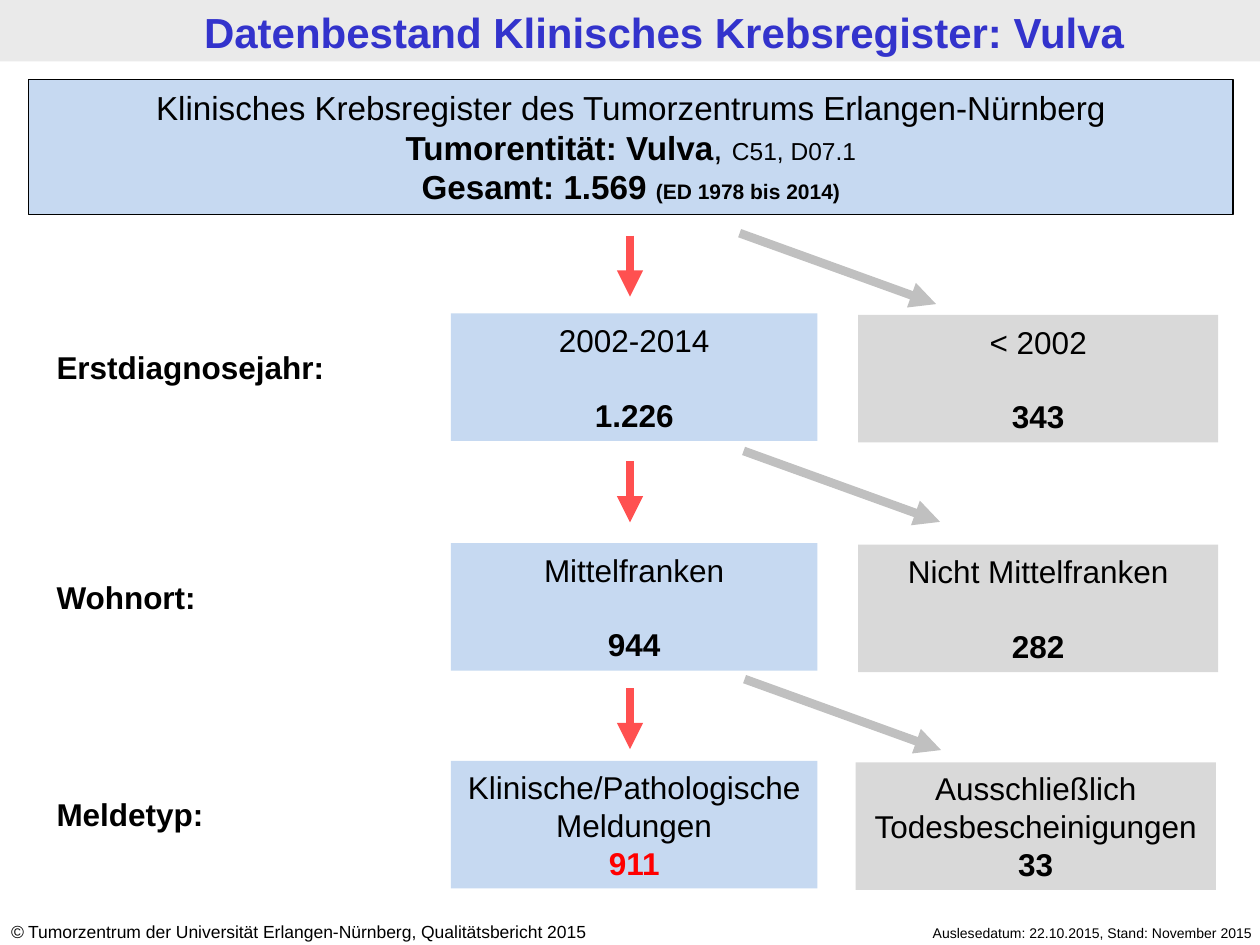
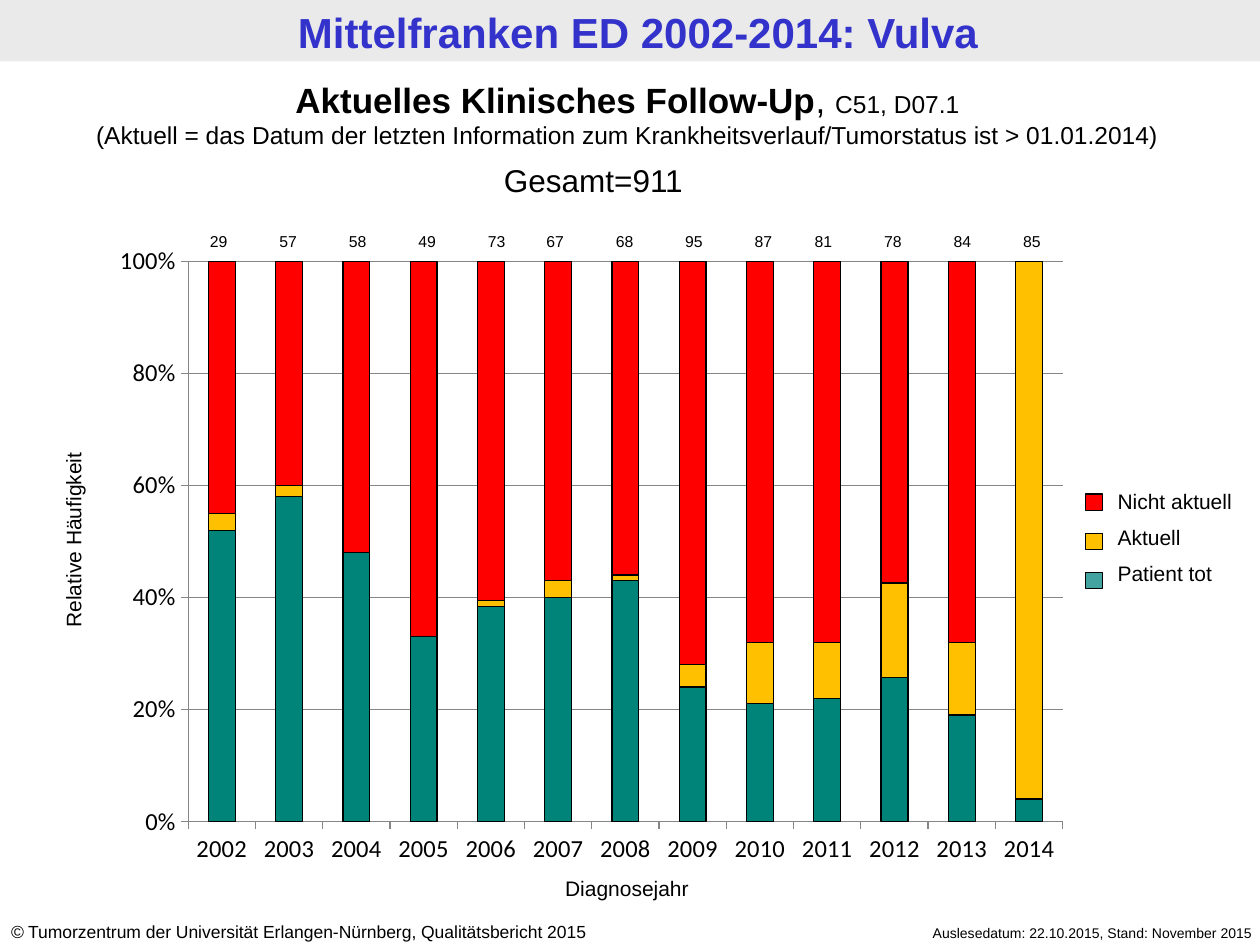
from dataclasses import dataclass
from itertools import chain

from lxml import etree
from pptx import Presentation, util as u
from pptx.chart import data as chart_data
from pptx.dml import color
from pptx.enum import chart as charts, shapes, text
from pptx.oxml import ns

Cm, Pt = u.Cm, u.Pt
LEFT, CENTER, RIGHT = text.PP_ALIGN.LEFT, text.PP_ALIGN.CENTER, text.PP_ALIGN.RIGHT


@dataclass(frozen=True)
class Theme:
    font: str = "Arial"
    chart_font: str = "Calibri"
    ink: str = "000000"
    title: str = "3333CC"
    band: str = "EAEAEA"
    kept: str = "C6D9F1"
    dropped: str = "D9D9D9"
    kept_arrow: str = "FF5050"
    dropped_arrow: str = "C0C0C0"
    alert: str = "FF0000"
    current: str = "FFC000"
    dead: str = "008378"
    axis: str = "868686"
    title_size: int = 24
    subtitle_size: int = 20
    header_size: int = 19
    body_size: int = 18
    detail_size: int = 14
    small_size: int = 12
    footer_size: int = 10
    count_size: int = 9
    date_size: int = 8


THEME = Theme()


@dataclass(frozen=True)
class Span:
    text: str
    size: int = THEME.body_size
    bold: bool = False
    color: str = THEME.ink
    italic: bool = False


@dataclass(frozen=True)
class Area:
    """Left, top, width and height in centimetres."""
    left: float
    top: float
    width: float
    height: float

    def lengths(self) -> list:
        return [Cm(n) for n in (self.left, self.top, self.width, self.height)]


@dataclass(frozen=True)
class Stage:
    label: str
    top: float
    kept: str
    kept_count: Span
    dropped: str
    dropped_count: str
    dropped_left: float
    count_gap: float
    kept_arrow_top: float
    dropped_arrow_start: tuple


STAGES = [
    Stage("Erstdiagnosejahr:", 6.32, "2002-2014", Span("1.226", bold=True),
          "< 2002", "343", 17.3, 21, 4.75, (14.91, 4.7)),
    Stage("Wohnort:", 10.95, "Mittelfranken", Span("944", bold=True),
          "Nicht Mittelfranken", "282", 17.3, 21, 9.3, (14.99, 9.09)),
    Stage("Meldetyp:", 15.34, "Klinische/Pathologische Meldungen",
          Span("911", bold=True, color=THEME.alert),
          "Ausschließlich Todesbescheinigungen", "33", 17.25, 0, 13.87, (15.01, 13.69)),
]


@dataclass(frozen=True)
class Status:
    name: str
    color: str
    shares: tuple
    key_color: str
    key_alpha: int = 100


STATUSES = [
    Status("Patient tot", THEME.dead,
           (52, 58, 48, 33, 38, 40, 43, 24, 21, 22, 26, 19, 4), "008380", 74),
    Status("Aktuell", THEME.current,
           (3, 2, 0, 0, 1, 3, 1, 4, 11, 10, 17, 13, 96), THEME.current),
    Status("Nicht aktuell", THEME.alert,
           (45, 40, 52, 67, 60, 57, 56, 72, 68, 68, 58, 68, 0), THEME.alert),
]
YEARS = range(2002, 2015)
COUNT_STEP = 1.4
# Each group of case counts starts at its own left edge
COUNT_GROUPS = {3.71: (29, 57, 58, 49, 73), 10.49: (67, 68, 95, 87), 15.9: (81, 78, 84, 85)}


def rgb(code: str) -> color.RGBColor:
    return color.RGBColor.from_string(code)


def write(frame, lines: list, align=LEFT, gap: float = 0) -> None:
    """Fill a frame with lines of spans; gap is the space between lines in points."""
    frame.word_wrap = True
    for number, spans in enumerate(lines):
        para = frame.add_paragraph() if number else frame.paragraphs[0]
        para.alignment = align
        if number and gap:
            para.space_before = Pt(gap)
        for span in spans:
            run = para.add_run()
            run.text = span.text
            run.font.name = THEME.font
            run.font.size = Pt(span.size)
            run.font.bold, run.font.italic = span.bold, span.italic
            run.font.color.rgb = rgb(span.color)


def add_text(page, area: Area, lines: list, align=LEFT, gap: float = 0):
    box = page.shapes.add_textbox(*area.lengths())
    write(box.text_frame, lines, align, gap)
    return box


def add_box(page, area: Area, fill: str, lines: list = (), outlined=False, gap: float = 0):
    box = page.shapes.add_shape(shapes.MSO_SHAPE.RECTANGLE, *area.lengths())
    box.shadow.inherit = False
    box.fill.solid()
    box.fill.fore_color.rgb = rgb(fill)
    if outlined:
        box.line.color.rgb = rgb(THEME.ink)
        box.line.width = Pt(0.75)
    else:
        box.line.fill.background()
    box.text_frame.vertical_anchor = text.MSO_ANCHOR.MIDDLE
    write(box.text_frame, lines, CENTER, gap)
    return box


def add_arrow(page, start: tuple, run: float, drop: float, line_color: str) -> None:
    left, top = start
    arrow = page.shapes.add_connector(shapes.MSO_CONNECTOR.STRAIGHT, Cm(left), Cm(top),
                                      Cm(left + run), Cm(top + drop))
    arrow.line.color.rgb = rgb(line_color)
    arrow.line.width = Pt(5)
    properties = arrow.element.spPr
    etree.SubElement(properties.find(ns.qn("a:ln")), ns.qn("a:tailEnd"), type="triangle")
    etree.SubElement(properties, ns.qn("a:effectLst"))


def add_page(deck, heading: str, title_left: float):
    """Add a slide with the title on its band and both footers."""
    page = deck.slides.add_slide(deck.slide_layouts[5])
    title = page.shapes.title
    title.left, title.top, title.width, title.height = Area(title_left, 0.03, 23.6, 1.24).lengths()
    frame = title.text_frame
    frame.margin_top = frame.margin_bottom = Cm(0.1)
    frame.vertical_anchor = text.MSO_ANCHOR.TOP
    frame.auto_size = text.MSO_AUTO_SIZE.NONE
    write(frame, [[Span(heading, THEME.title_size, True, THEME.title)]], CENTER)
    band = add_box(page, Area(0, 0, 25.4, 1.24), THEME.band)
    title.element.addprevious(band.element)
    add_text(page, Area(16.89, 18.52, 8.61, 0.61),
             [[Span("Auslesedatum: 22.10.2015, Stand: November 2015", THEME.date_size)]], RIGHT)
    add_text(page, Area(-0.03, 18.44, 13.31, 0.69), [[
        Span("©", THEME.footer_size, italic=True),
        Span(" Tumorzentrum der Universität Erlangen-Nürnberg, Qualitätsbericht 2015",
             THEME.footer_size)]])
    return page


def add_stage(page, stage: Stage) -> None:
    add_box(page, Area(9.09, stage.top, 7.39, 2.57), THEME.kept,
            [[Span(stage.kept)], [stage.kept_count]], gap=stage.count_gap)
    add_box(page, Area(stage.dropped_left, stage.top + 0.03, 7.26, 2.57), THEME.dropped,
            [[Span(stage.dropped)], [Span(stage.dropped_count, bold=True)]], gap=stage.count_gap)
    add_text(page, Area(0.89, stage.top + 0.57, 7.01, 1.02), [[Span(stage.label, bold=True)]])
    add_arrow(page, (12.7, stage.kept_arrow_top), 0, 1.23, THEME.kept_arrow)
    add_arrow(page, stage.dropped_arrow_start, 3.96, 1.43, THEME.dropped_arrow)


def build_data_page(deck) -> None:
    page = add_page(deck, "Datenbestand Klinisches Krebsregister: Vulva", 1.59)
    size = THEME.header_size
    add_box(page, Area(0.58, 1.6, 24.28, 2.72), THEME.kept, [
        [Span("Klinisches Krebsregister des Tumorzentrums Erlangen-Nürnberg", size)],
        [Span("Tumorentität: Vulva", size, True), Span(", ", size),
         Span("C51, D07.1", THEME.detail_size)],
        [Span("Gesamt: 1.569 ", size, True),
         Span("(ED 1978 bis 2014)", THEME.small_size, True)],
    ], outlined=True)
    for stage in STAGES:
        add_stage(page, stage)


def place_plot(chart, **fractions: float) -> None:
    """Fix the inner plot area as fractions of the chart's size."""
    plot_area = chart.element.find(".//" + ns.qn("c:plotArea"))
    for old in plot_area.findall(ns.qn("c:layout")):
        plot_area.remove(old)
    layout = etree.Element(ns.qn("c:layout"))
    plot_area.insert(0, layout)
    manual = etree.SubElement(layout, ns.qn("c:manualLayout"))
    settings = {"layoutTarget": "inner", "xMode": "edge", "yMode": "edge", **fractions}
    for name, value in settings.items():
        etree.SubElement(manual, ns.qn(f"c:{name}"), val=str(value))


def add_status_chart(page) -> None:
    data = chart_data.CategoryChartData(number_format="0")
    data.categories = [str(year) for year in YEARS]
    for status in STATUSES:
        data.add_series(status.name, status.shares)
    chart = page.shapes.add_chart(charts.XL_CHART_TYPE.COLUMN_STACKED_100,
                                  *Area(2.01, 4.75, 19.81, 12.98).lengths(), data).chart
    chart.has_legend = chart.has_title = False
    chart.font.name = THEME.chart_font
    chart.font.size = Pt(THEME.detail_size)
    chart.font.color.rgb = rgb(THEME.ink)
    plot = chart.plots[0]
    plot.gap_width, plot.overlap, plot.vary_by_categories = 150, 100, False
    for series, status in zip(plot.series, STATUSES):
        series.format.fill.solid()
        series.format.fill.fore_color.rgb = rgb(status.color)
        series.format.line.color.rgb = rgb(THEME.ink)
        series.format.line.width = Pt(0.75)
    shares = chart.value_axis
    shares.minimum_scale, shares.maximum_scale, shares.major_unit = 0, 1, 0.2
    shares.has_major_gridlines = True
    shares.tick_labels.number_format = "0%"
    shares.tick_labels.number_format_is_linked = False
    for axis in (shares, chart.category_axis):
        axis.major_tick_mark = charts.XL_TICK_MARK.OUTSIDE
        axis.minor_tick_mark = charts.XL_TICK_MARK.NONE
    for styled in (shares, chart.category_axis, shares.major_gridlines):
        styled.format.line.color.rgb = rgb(THEME.axis)
        styled.format.line.width = Pt(0.75)
    place_plot(chart, x=0.09, y=0.04, w=0.89, h=0.87)


def add_key(page) -> None:
    statuses = STATUSES[::-1]
    add_text(page, Area(22.28, 9.73, 3.1, 2.31),
             [[Span(status.name, THEME.small_size)] for status in statuses], gap=6)
    for row, status in enumerate(statuses):
        swatch = add_box(page, Area(21.89, 9.96 + 0.79 * row, 0.33, 0.33),
                         status.key_color, outlined=True)
        if status.key_alpha < 100:
            fill = swatch.element.spPr.find(ns.qn("a:solidFill"))
            etree.SubElement(fill[0], ns.qn("a:alpha"), val=str(status.key_alpha * 1000))


def build_follow_up_page(deck) -> None:
    page = add_page(deck, "Mittelfranken ED 2002-2014: Vulva", 1.06)
    add_status_chart(page)
    small = THEME.small_size
    label = add_text(page, Area(-1.57, 10.49, 6.12, 0.79),
                     [[Span("Relative Häufigkeit", small)]], CENTER)
    label.rotation = 270
    add_text(page, Area(9.78, 17.53, 5.72, 0.79), [[Span("Diagnosejahr", small)]], CENTER)
    counts = chain.from_iterable(
        ((left + COUNT_STEP * place, count) for place, count in enumerate(group))
        for left, group in COUNT_GROUPS.items())
    for left, count in counts:
        add_text(page, Area(left, 4.55, 1.4, 0.64),
                 [[Span(str(count), THEME.count_size)]], CENTER)
    add_text(page, Area(-0.1, 1.45, 25.5, 1.7), [
        [Span("Aktuelles Klinisches Follow-Up", THEME.subtitle_size, True),
         Span(", ", THEME.subtitle_size), Span("C51, D07.1", THEME.detail_size)],
        [Span("(Aktuell = das Datum der letzten Information zum Krankheitsverlauf/Tumorstatus"
              " ist > 01.01.2014)", THEME.detail_size)],
    ], CENTER)
    add_text(page, Area(9.91, 3.12, 5.59, 1.02), [[Span("Gesamt=911")]])
    add_key(page)


def main() -> None:
    deck = Presentation()
    deck.slide_width, deck.slide_height = Cm(25.4), Cm(19.05)
    build_data_page(deck)
    build_follow_up_page(deck)
    deck.save("out.pptx")


if __name__ == "__main__":
    main()
